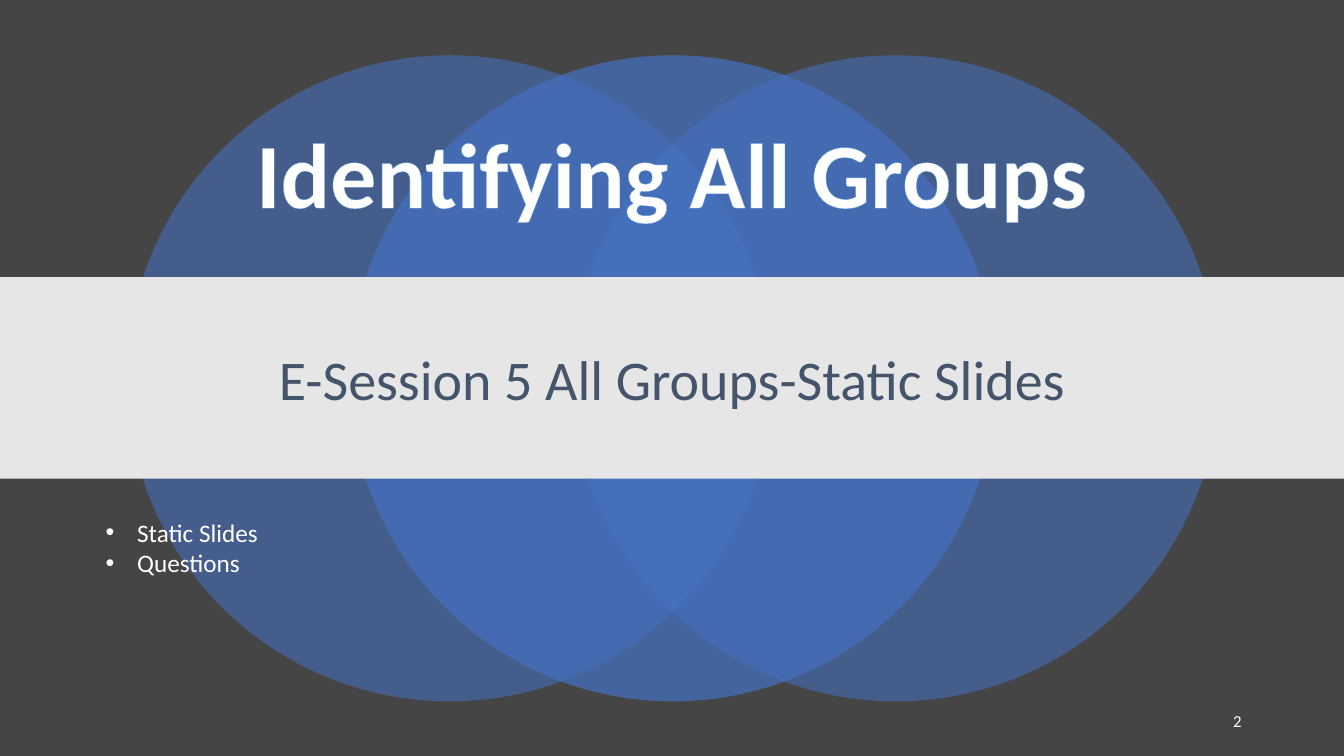
from lxml.etree import SubElement as Sub
from pptx import Presentation
from pptx.dml.color import RGBColor as RGB
from pptx.enum.shapes import MSO_SHAPE as SHAPE
from pptx.enum.text import MSO_ANCHOR as ANCHOR, MSO_AUTO_SIZE as AUTO, PP_ALIGN as ALIGN
from pptx.oxml import parse_xml
from pptx.oxml.ns import nsdecls, qn
from pptx.util import Pt

W, H = 960, 540
COLORS = {
    "background": "454545",
    "circle": "4472C4",
    "band": "E7E6E6",
    "band_text": "44546A",
    "text": "FFFFFF",
    "outline": "5B9BD5",
}


def color(name):
    return RGB.from_string(COLORS[name])


def add_filled(slide, kind, box, fill, opacity=100):
    sp = slide.shapes.add_shape(kind, *map(Pt, box))
    sp.shadow.inherit = False
    sp.line.fill.background()
    sp.fill.solid()
    sp.fill.fore_color.rgb = color(fill)
    if opacity < 100:
        clr = sp._element.spPr.find(qn("a:solidFill"))[0]
        Sub(clr, qn("a:alpha"), val=str(opacity * 1000))
    return sp


def add_text(slide, box, lines, size, fill="text", bold=False,
             anchor=ANCHOR.TOP, auto=AUTO.NONE, para=None):
    tf = slide.shapes.add_textbox(*map(Pt, box)).text_frame
    frame = {"word_wrap": True, "vertical_anchor": anchor, "auto_size": auto}
    for key, value in frame.items():
        setattr(tf, key, value)
    for i, line in enumerate(lines):
        p = tf.add_paragraph() if i else tf.paragraphs[0]
        for key, value in (para or {}).items():
            setattr(p, key, value)
        r = p.add_run()
        r.text = line
        font = {"name": "Calibri", "size": Pt(size), "bold": bold}
        for key, value in font.items():
            setattr(r.font, key, value)
        r.font.color.rgb = color(fill)
    return tf


def add_circles(slide, box):
    left, top, width, size = box
    step = (width - size) / 2
    for place, opacity in ((0, 55), (2, 55), (1, 70)):
        add_filled(slide, SHAPE.OVAL, (left + place * step, top, size, size),
                   "circle", opacity)


def add_band(slide, box):
    left, top, width, height = box
    add_filled(slide, SHAPE.RECTANGLE, box, "band")
    add_text(slide, (left + 120, top + 21, width - 240, 108.5),
             ["E-Session 5 All Groups-Static Slides"], 40, "band_text",
             anchor=ANCHOR.MIDDLE,
             para={"alignment": ALIGN.CENTER, "line_spacing": 0.9})


def add_heading(slide, box):
    tf = add_text(slide, box, ["Identifying All Groups"], 66, bold=True,
                  auto=AUTO.SHAPE_TO_FIT_TEXT, para={"alignment": ALIGN.CENTER})
    rPr = tf.paragraphs[0].runs[0].font._element
    rPr.insert(0, parse_xml(
        f'<a:ln {nsdecls("a")} w="{Pt(0.8)}"><a:solidFill>'
        f'<a:srgbClr val="{COLORS["outline"]}"/></a:solidFill></a:ln>'))


def add_topics(slide, box):
    tf = add_text(slide, box, ["Static Slides", "Questions"], 18,
                  auto=AUTO.SHAPE_TO_FIT_TEXT)
    for p in tf.paragraphs:
        pPr = p._p.get_or_add_pPr()
        pPr.set("marL", str(Pt(22.5)))
        pPr.set("indent", str(Pt(-22.5)))
        Sub(pPr, qn("a:buFont"), typeface="Arial")
        Sub(pPr, qn("a:buChar"), char="•")


def add_page_number(slide, box):
    add_text(slide, box, ["2"], 12, anchor=ANCHOR.MIDDLE,
             para={"alignment": ALIGN.RIGHT, "space_after": Pt(6)})


def main():
    prs = Presentation()
    prs.slide_width, prs.slide_height = Pt(W), Pt(H)
    slide = prs.slides.add_slide(prs.slide_layouts[6])
    slide.background.fill.solid()
    slide.background.fill.fore_color.rgb = color("background")
    add_circles(slide, (90.5, 39.5, 780, 461.5))
    add_band(slide, (0, 198, W, 144))
    add_page_number(slide, (678, 500.5, 216, 28.8))
    add_heading(slide, (0, 79.2, W, 87.2))
    add_topics(slide, (68.4, 365.8, 398.2, 50.9))
    prs.save("out.pptx")


if __name__ == "__main__":
    main()
